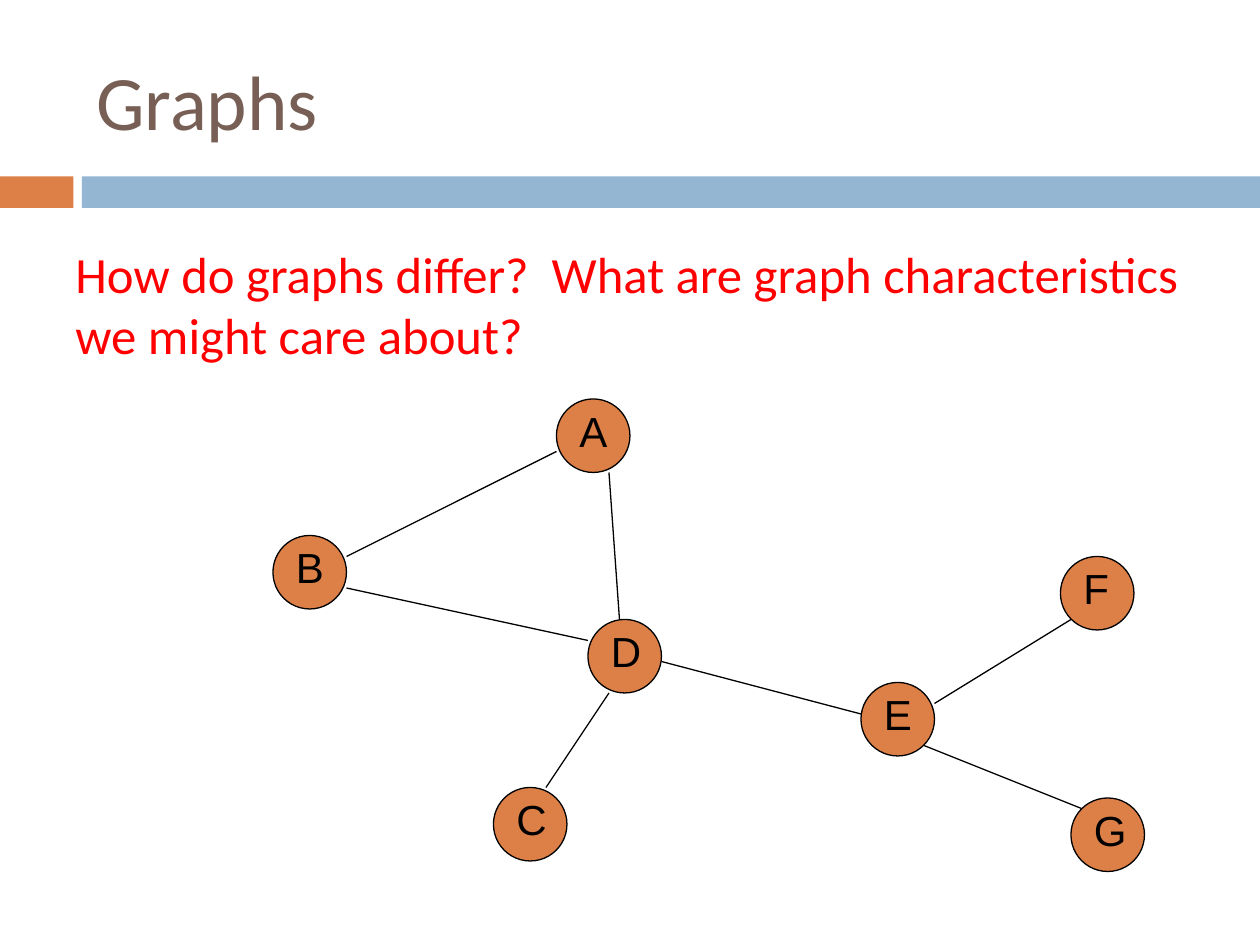
from lxml.etree import SubElement
from pptx import Presentation
from pptx.dml.color import RGBColor
from pptx.enum.shapes import MSO_CONNECTOR, MSO_SHAPE
from pptx.enum.text import MSO_ANCHOR
from pptx.oxml.ns import qn
from pptx.util import Pt

ORANGE = RGBColor(0xDD, 0x80, 0x47)
BLUE = RGBColor(0x94, 0xB6, 0xD2)
BROWN = RGBColor(0x77, 0x5F, 0x55)
RED = RGBColor(0xFF, 0x00, 0x00)
BLACK = RGBColor(0x00, 0x00, 0x00)

TITLE = "Graphs"
QUESTION = "How do graphs differ?  What are graph characteristics we might care about?"
BANDS = [(0, 42, ORANGE), (46.8, 673.2, BLUE)]
NODES = {
    "A": (318, 228),
    "B": (156, 306),
    "C": (282, 450),
    "E": (492, 390),
    "D": (336, 354),
    "F": (606, 318),
    "G": (612, 456),
}
EDGES = [
    ("B", (42, 12), "A", (0, 30)),
    ("B", (42, 30), "D", (0, 12)),
    ("D", (18, 0), "A", (30, 42)),
    ("D", (12, 42), "C", (30, 0)),
    ("D", (42, 24), "E", (0, 18)),
    ("E", (42, 12), "F", (6, 36)),
    ("E", (36, 36), "G", (6, 6)),
]
NODE_SIZE = 42
LABEL_SIZE = 36
LABEL_OFFSET = 6
LINE_WIDTH = 0.75


def add_filled_shape(shapes, kind, left, top, width, height, color):
    shape = shapes.add_shape(kind, Pt(left), Pt(top), Pt(width), Pt(height))
    shape.shadow.inherit = False
    shape.fill.solid()
    shape.fill.fore_color.rgb = color
    shape.line.fill.background()
    return shape


def add_text(shapes, text, box, font_name, size, color, space_before=0, anchor=MSO_ANCHOR.TOP):
    frame = shapes.add_textbox(*map(Pt, box)).text_frame
    frame.word_wrap = True
    frame.vertical_anchor = anchor
    paragraph = frame.paragraphs[0]
    paragraph.text = text
    paragraph.space_before = Pt(space_before)
    paragraph.font.name = font_name
    paragraph.font.size = Pt(size)
    paragraph.font.color.rgb = color


def outline(line):
    line.color.rgb = BLACK
    line.width = Pt(LINE_WIDTH)


def add_node(slide, label, left, top):
    shapes = slide.shapes.add_group_shape().shapes
    circle = add_filled_shape(shapes, MSO_SHAPE.OVAL, left, top, NODE_SIZE, NODE_SIZE, ORANGE)
    outline(circle.line)
    box = (left + LABEL_OFFSET, top, LABEL_SIZE, LABEL_SIZE)
    add_text(shapes, label, box, "Arial", 24, BLACK, space_before=12)


def add_edge(slide, start, start_offset, end, end_offset):
    start_x, start_y = map(sum, zip(NODES[start], start_offset))
    end_x, end_y = map(sum, zip(NODES[end], end_offset))
    connector = slide.shapes.add_connector(
        MSO_CONNECTOR.STRAIGHT, Pt(start_x), Pt(start_y), Pt(end_x), Pt(end_y)
    )
    outline(connector.line)
    SubElement(connector._element.spPr, qn("a:effectLst"))


def main():
    presentation = Presentation()
    presentation.slide_width = Pt(720)
    presentation.slide_height = Pt(540)
    slide = presentation.slides.add_slide(presentation.slide_layouts[6])
    for left, width, color in BANDS:
        add_filled_shape(slide.shapes, MSO_SHAPE.RECTANGLE, left, 100.8, width, 18, color)
    add_text(slide.shapes, TITLE, (48, 18, 642, 78), "Calibri", 44, BROWN, anchor=MSO_ANCHOR.MIDDLE)
    add_text(slide.shapes, QUESTION, (36, 135, 648, 104.4), "Calibri", 29, RED, space_before=7)
    for label, (left, top) in NODES.items():
        add_node(slide, label, left, top)
    for edge in EDGES:
        add_edge(slide, *edge)
    presentation.save("out.pptx")


if __name__ == "__main__":
    main()
